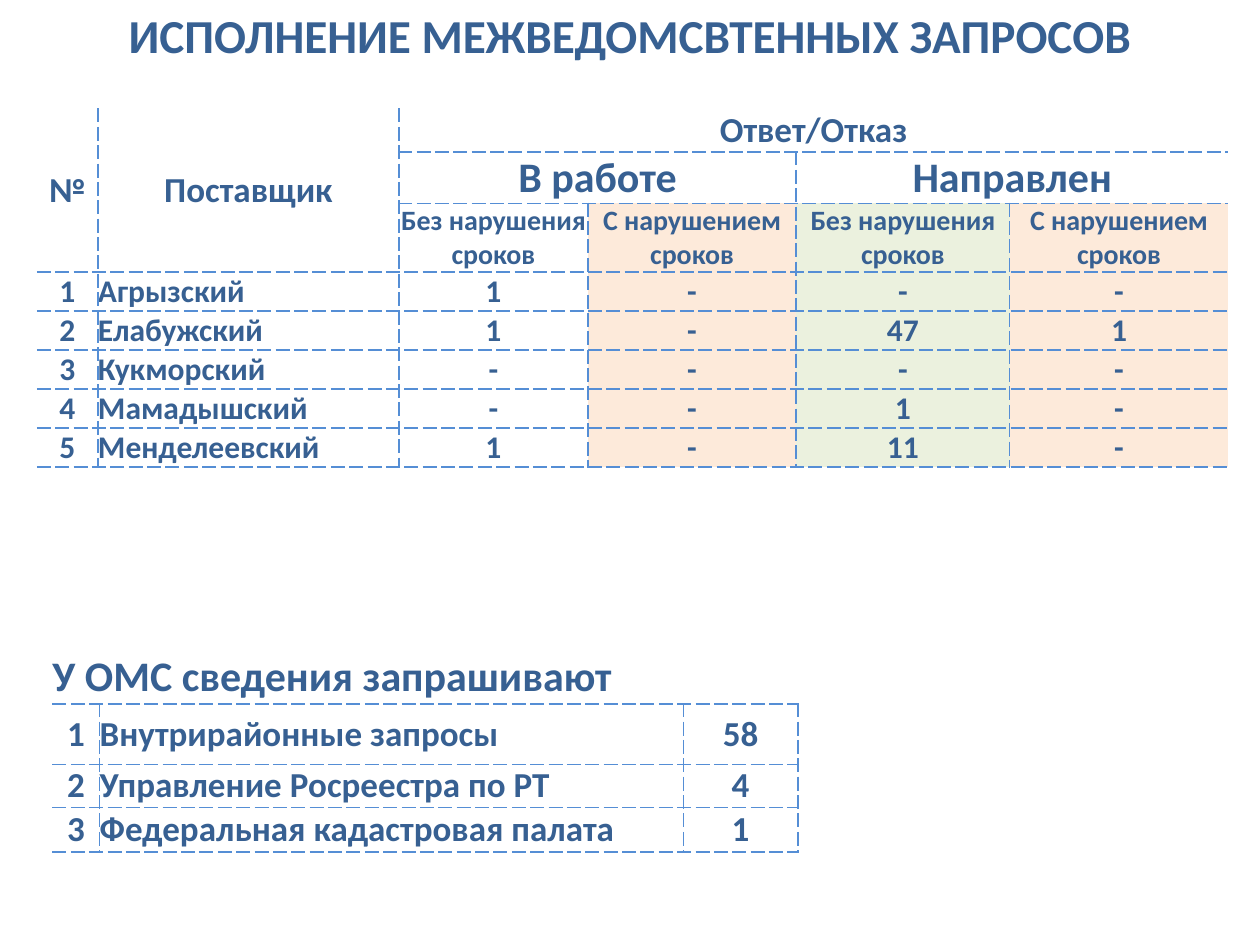
import pptx
import pptx.dml.color
import pptx.enum.text
import pptx.oxml
import pptx.oxml.ns
import pptx.util
from dataclasses import dataclass

Pt = pptx.util.Pt
RGB = pptx.dml.color.RGBColor.from_string
ALIGN = pptx.enum.text.PP_ALIGN
MIDDLE = pptx.enum.text.MSO_ANCHOR.MIDDLE
NO_STYLE = "{2D5ABB26-0587-4C30-8999-92F81FD0307C}"


@dataclass(frozen=True)
class Theme:
    font: str = "Calibri"
    text: str = "376092"
    line: str = "558ED5"
    late: str = "FDEADA"
    on_time: str = "EBF1DE"
    title: int = 27
    heading: int = 24
    label: int = 20
    body: int = 18
    small: int = 16


class SlideBuilder:
    def __init__(self, s, theme):
        self.s = s
        self.theme = theme

    def add_text(self, tf, text, size, align):
        p = tf.paragraphs[0]
        p.alignment = align
        r = p.add_run()
        r.text = text
        formats = {"name": self.theme.font, "size": Pt(size), "bold": True}
        for name, value in formats.items():
            setattr(r.font, name, value)
        r.font.color.rgb = RGB(self.theme.text)

    def title(self, text, left, top, width, height):
        sp = self.s.shapes.add_textbox(Pt(left), Pt(top), Pt(width), Pt(height))
        sp.text_frame.word_wrap = True
        self.add_text(sp.text_frame, text, self.theme.title, ALIGN.CENTER)

    def table(self, left, top, widths, heights):
        frame = self.s.shapes.add_table(
            len(heights), len(widths), Pt(left), Pt(top),
            Pt(sum(widths)), Pt(sum(heights)))
        table = frame.table
        table.first_row = table.horz_banding = False
        style = frame._element.find(".//" + pptx.oxml.ns.qn("a:tableStyleId"))
        style.text = NO_STYLE
        for column, width in zip(table.columns, widths):
            column.width = Pt(width)
        for row, height in zip(table.rows, heights):
            row.height = Pt(height)
        for cell in table.iter_cells():
            for side in ("left", "right", "top", "bottom"):
                setattr(cell, "margin_" + side, 0)
        return table

    def border(self, cell, sides):
        tc_pr = cell._tc.get_or_add_tcPr()
        for side in sides:
            tc_pr.append(pptx.oxml.parse_xml(
                f'<a:ln{side} {pptx.oxml.ns.nsdecls("a")} w="{Pt(1)}">'
                f'<a:solidFill><a:srgbClr val="{self.theme.line}"/></a:solidFill>'
                f'<a:prstDash val="sysDash"/></a:ln{side}>'))

    def cell(self, table, row, col, text, size, span=(1, 1),
             align=ALIGN.CENTER, fill=None, sides="LRTB"):
        cell = table.cell(row, col)
        if span != (1, 1):
            cell.merge(table.cell(row + span[0] - 1, col + span[1] - 1))
        self.border(cell, sides)
        if fill:
            cell.fill.solid()
            cell.fill.fore_color.rgb = RGB(fill)
        else:
            cell.fill.background()
        cell.vertical_anchor = MIDDLE
        self.add_text(cell.text_frame, text, size, align)


def supplier_table(slide, theme):
    table = slide.table(21, 62, [35, 172, 108, 119, 122, 125],
                        [25, 29.3, 39.2] + [22.3] * 5)
    # Header rows
    slide.cell(table, 0, 0, "№", theme.label, (3, 1), sides="RB")
    slide.cell(table, 0, 1, "Поставщик", theme.label, (3, 1), sides="LRB")
    slide.cell(table, 0, 2, "Ответ/Отказ", theme.label, (1, 4), sides="LB")
    slide.cell(table, 1, 2, "В работе", theme.heading, (1, 2))
    slide.cell(table, 1, 4, "Направлен", theme.heading, (1, 2), sides="LTB")

    # Open outer edges, tinted deadline columns
    sides = ["RTB"] + ["LRTB"] * 4 + ["LTB"]
    fills = [None, None, None, theme.late, theme.on_time, theme.late]
    deadlines = ["Без нарушения сроков", "С нарушением сроков"] * 2
    for col, text in enumerate(deadlines, 2):
        slide.cell(table, 2, col, text, theme.small, fill=fills[col],
                   sides=sides[col])

    # Suppliers
    suppliers = [
        ("Агрызский", "1", "-", "-", "-"),
        ("Елабужский", "1", "-", "47", "1"),
        ("Кукморский", "-", "-", "-", "-"),
        ("Мамадышский", "-", "-", "1", "-"),
        ("Менделеевский", "1", "-", "11", "-"),
    ]
    for number, supplier in enumerate(suppliers, 1):
        for col, text in enumerate((str(number), *supplier)):
            slide.cell(table, number + 2, col, text, theme.body,
                       align=ALIGN.LEFT if col == 1 else ALIGN.CENTER,
                       fill=fills[col], sides=sides[col])


def request_table(slide, theme):
    table = slide.table(30, 372, [27, 333.5, 65.5], [30.3, 34.6, 24.5, 25.4])
    slide.cell(table, 0, 0, "У ОМС сведения запрашивают", theme.heading,
               (1, 3), align=ALIGN.LEFT, sides="B")
    requests = [
        ("Внутрирайонные запросы", "58"),
        ("Управление Росреестра по РТ", "4"),
        ("Федеральная кадастровая палата", "1"),
    ]
    for row, request in enumerate(requests, 1):
        for col, text in enumerate((str(row), *request)):
            slide.cell(table, row, col, text, theme.label,
                       align=ALIGN.LEFT if col == 1 else ALIGN.CENTER,
                       sides="LRTB" if col else "RTB")


def main():
    prs = pptx.Presentation()
    prs.slide_width, prs.slide_height = Pt(720), Pt(540)
    theme = Theme()
    slide = SlideBuilder(prs.slides.add_slide(prs.slide_layouts[6]), theme)

    supplier_table(slide, theme)
    request_table(slide, theme)
    slide.title("ИСПОЛНЕНИЕ МЕЖВЕДОМСВТЕННЫХ ЗАПРОСОВ", 0, 0, 720, 40)

    prs.save("out.pptx")


if __name__ == "__main__":
    main()
